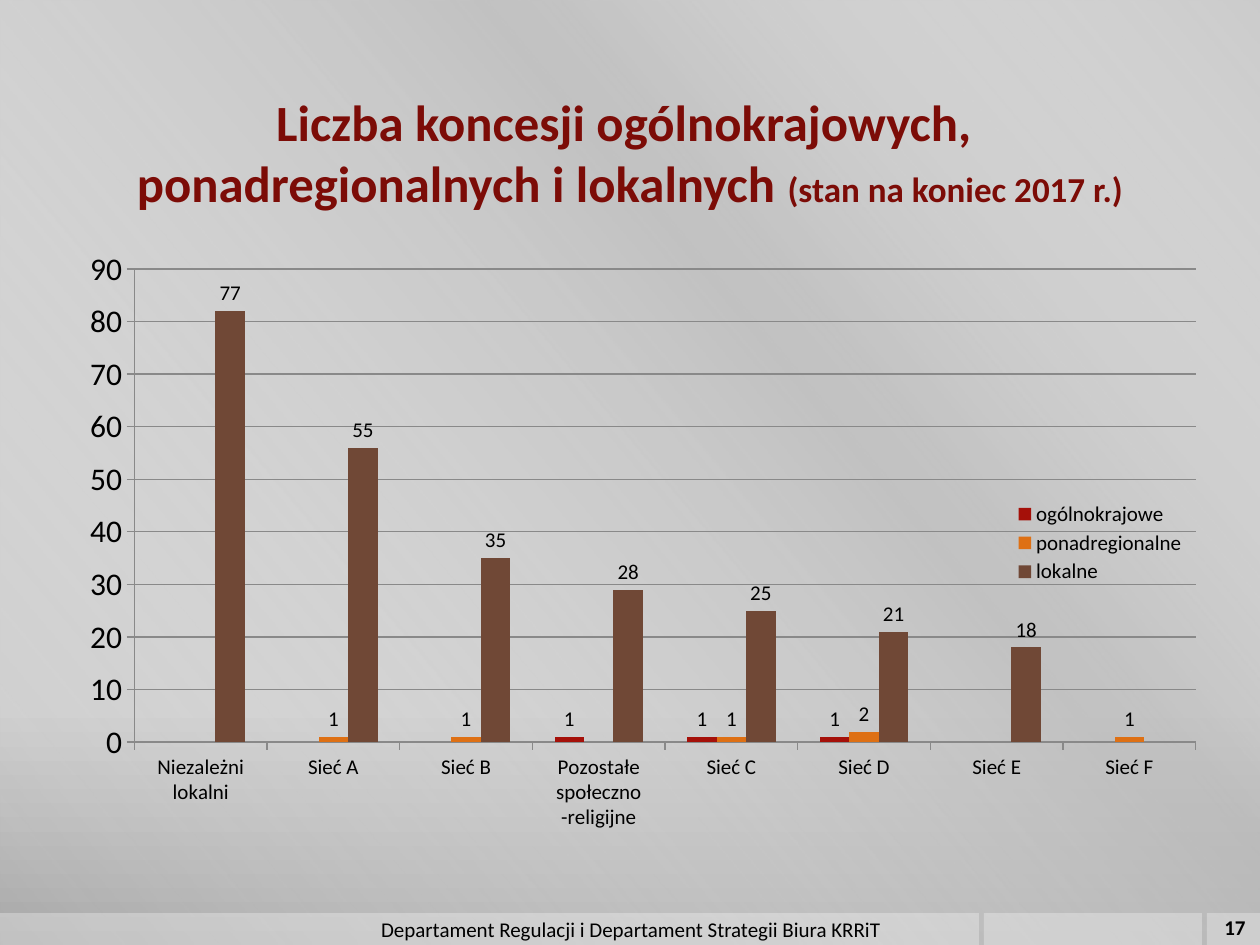
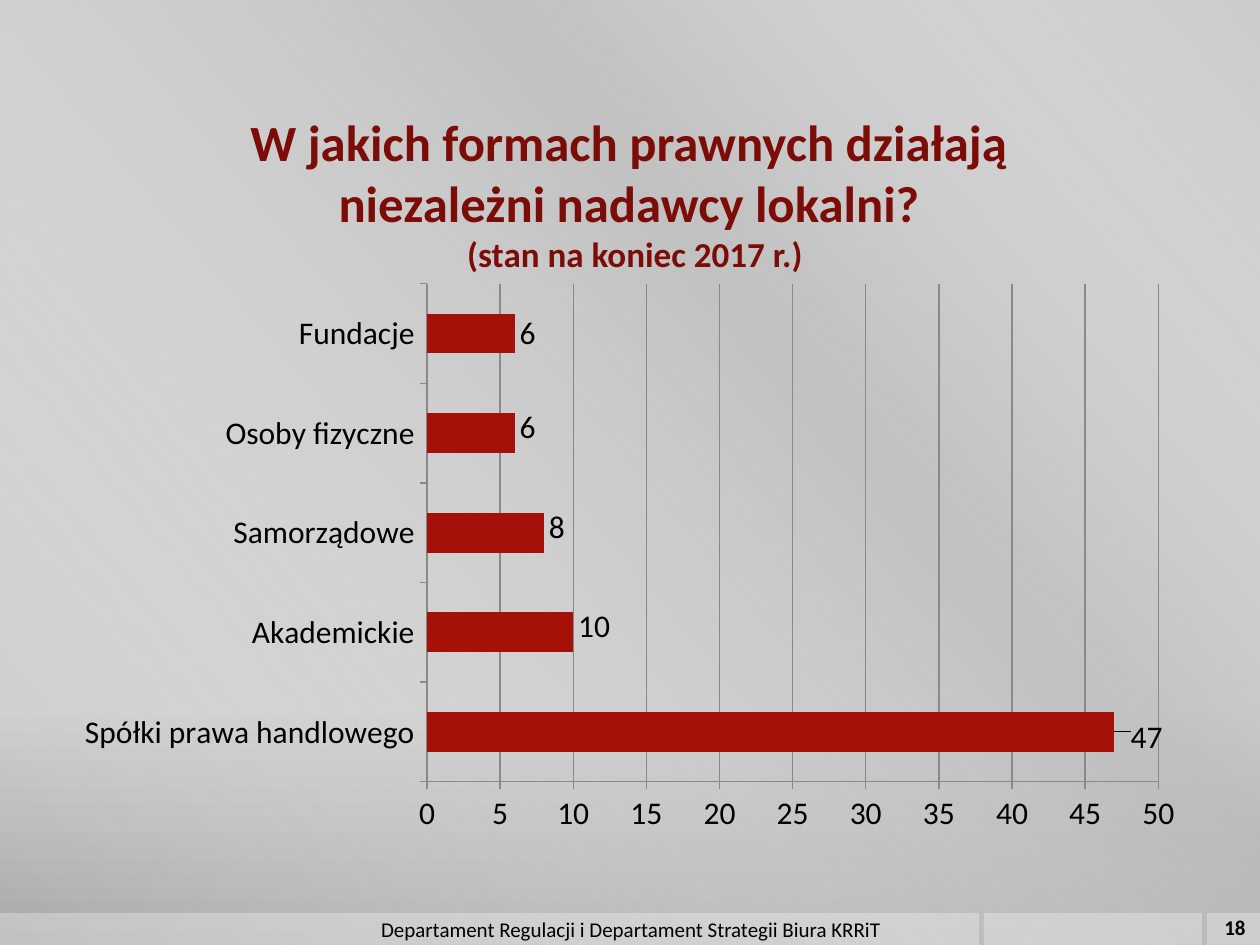
from lxml import etree
from pptx import Presentation
from pptx import util as u
from pptx.chart.data import CategoryChartData
from pptx.dml.color import RGBColor
from pptx.enum import chart as ch
from pptx.enum import shapes, text
from pptx.oxml import parse_xml
from pptx.oxml.ns import qn

SCALE = 914400 / 126
FONT = "Calibri"
TITLE_RED = "7C0C07"
RED, ORANGE, BROWN = "A51009", "DE7014", "704836"
BLACK, WHITE, GREY, GRID = "000000", "FFFFFF", "BFBFBF", "898989"
DRAWING = "http://schemas.openxmlformats.org/drawingml/2006/main"
FOOTER = "Departament Regulacji i Departament Strategii Biura KRRiT"
DATE_NOTE = "(stan na koniec 2017 r.)"


def emu(*lengths):
    return [u.Emu(round(length * SCALE)) for length in lengths]


def colour(value):
    return RGBColor.from_string(value)


def colour_xml(value, alpha):
    return f'<a:srgbClr val="{value}"><a:alpha val="{alpha * 1000}"/></a:srgbClr>'


def solid(value, alpha):
    return f'<a:solidFill xmlns:a="{DRAWING}">{colour_xml(value, alpha)}</a:solidFill>'


def gradient(angle, stops):
    listed = "".join(
        f'<a:gs pos="{place * 1000}">{colour_xml(value, alpha)}</a:gs>'
        for place, value, alpha in stops
    )
    return (
        f'<a:gradFill xmlns:a="{DRAWING}" rotWithShape="1"><a:gsLst>{listed}</a:gsLst>'
        f'<a:lin ang="{angle * 60000}" scaled="0"/></a:gradFill>'
    )


def paint(owner, fill, xml):
    fill.background()
    empty = owner.xpath(".//a:noFill")[0]
    empty.getparent().replace(empty, parse_xml(xml))


def style(font, size, value=BLACK, bold=False):
    font.name = FONT
    font.size = u.Pt(size)
    font.bold = bold
    font.color.rgb = colour(value)


def add_span(para, words, size, value=BLACK, bold=False):
    span = para.add_run()
    span.text = words
    style(span.font, size, value, bold)


def dress_master(master, page):
    paint(
        master.element,
        master.background.fill,
        gradient(90, [(0, "CBCBCB", 100), (76, "C8C8C8", 100), (100, "A7A7A7", 100)]),
    )
    sheen = gradient(140, [(0, WHITE, 0), (34, GREY, 61), (38, GREY, 76), (100, WHITE, 0)])
    band = solid(WHITE, 30)
    panels = [
        ((0, 0, 1260, 945), sheen),
        ((0, 913, 979, 32), band),
        ((984, 913, 218, 32), band),
        ((1207, 913, 53, 32), band),
    ]
    for place, (box, fill) in enumerate(panels, start=2):
        panel = page.shapes.add_shape(shapes.MSO_SHAPE.RECTANGLE, *emu(*box))
        panel.shadow.inherit = False
        paint(panel.element, panel.fill, fill)
        panel.line.fill.background()
        master.shapes.element.insert(place, panel.element)


def add_title(page, box, lines, note):
    title = page.shapes.title
    title.left, title.top, title.width, title.height = emu(*box)
    frame = title.text_frame
    frame.auto_size = text.MSO_AUTO_SIZE.NONE
    frame.word_wrap = True
    frame.vertical_anchor = text.MSO_ANCHOR.MIDDLE
    frame.margin_left = frame.margin_right = 0
    frame.margin_top = frame.margin_bottom = u.Inches(0.05)
    para = frame.paragraphs[0]
    para.alignment = text.PP_ALIGN.CENTER
    for index, line in enumerate(lines):
        if index:
            para.add_line_break()
        if line:
            add_span(para, line, 29, TITLE_RED, True)
    add_span(para, note, 20, TITLE_RED, True)


def add_label(page, box, words, alignment, bold=False):
    frame = page.shapes.add_textbox(*emu(*box)).text_frame
    frame.word_wrap = True
    frame.vertical_anchor = text.MSO_ANCHOR.MIDDLE
    para = frame.paragraphs[0]
    para.alignment = alignment
    add_span(para, words, 12, BLACK, bold)


def add_footer(page, number):
    add_label(page, (1205, 911, 53, 32), str(number), text.PP_ALIGN.RIGHT, True)
    add_label(page, (174, 913, 914, 32), FOOTER, text.PP_ALIGN.CENTER)


def set_layout(parent, place, **values):
    for old in parent.findall(qn("c:layout")):
        parent.remove(old)
    layout = etree.Element(qn("c:layout"))
    manual = etree.SubElement(layout, qn("c:manualLayout"))
    for name, value in values.items():
        etree.SubElement(manual, qn(f"c:{name}")).set("val", str(value))
    parent.insert(place, layout)


def fractions(outer, inner):
    left, top, width, height = outer
    return dict(
        x=round((inner[0] - left) / width, 3),
        y=round((inner[1] - top) / height, 3),
        w=round(inner[2] / width, 3),
        h=round(inner[3] / height, 3),
    )


def style_axis(axis, size):
    axis.major_tick_mark = ch.XL_TICK_MARK.OUTSIDE
    axis.minor_tick_mark = ch.XL_TICK_MARK.NONE
    axis.format.line.color.rgb = colour(GRID)
    axis.format.line.width = u.Pt(0.75)
    style(axis.tick_labels.font, size)


def add_bar_chart(page, kind, box, plot_box, categories, rows, top, step, sizes):
    category_size, label_size = sizes
    data = CategoryChartData(number_format="General")
    data.categories = categories
    for name, values, _ in rows:
        data.add_series(name, values)
    chart = page.shapes.add_chart(kind, *emu(*box), data).chart
    chart.has_title = False
    chart.has_legend = False
    style(chart.font, 18)
    backdrop = parse_xml(
        '<c:spPr xmlns:c="http://schemas.openxmlformats.org/drawingml/2006/chart" '
        f'xmlns:a="{DRAWING}"><a:noFill/><a:ln><a:noFill/></a:ln></c:spPr>'
    )
    chart.element.find(qn("c:txPr")).addprevious(backdrop)
    set_layout(
        chart.element.xpath("c:chart/c:plotArea")[0], 0,
        layoutTarget="inner", xMode="edge", yMode="edge", **fractions(box, plot_box),
    )
    style_axis(chart.category_axis, category_size)
    scale = chart.value_axis
    style_axis(scale, 18)
    scale.minimum_scale, scale.maximum_scale, scale.major_unit = 0, top, step
    scale.has_major_gridlines = True
    scale.major_gridlines.format.line.color.rgb = colour(GRID)
    scale.major_gridlines.format.line.width = u.Pt(0.75)
    plot = chart.plots[0]
    plot.gap_width, plot.overlap, plot.vary_by_categories = 150, 0, False
    for series, (_, _, value) in zip(plot.series, rows):
        series.format.fill.solid()
        series.format.fill.fore_color.rgb = colour(value)
        series.invert_if_negative = False
        labels = series.data_labels
        labels.show_value = True
        labels.position = ch.XL_LABEL_POSITION.OUTSIDE_END
        style(labels.font, label_size)
    return chart


def add_legend(chart, box, legend_box):
    chart.has_legend = True
    chart.legend.position = ch.XL_LEGEND_POSITION.RIGHT
    chart.legend.include_in_layout = False
    style(chart.legend.font, 12)
    set_layout(
        chart.element.xpath("c:chart/c:legend")[0], 1,
        xMode="edge", yMode="edge", **fractions(box, legend_box),
    )


def licence_page(page):
    add_title(
        page, (63, 84, 1134, 136),
        ["Liczba koncesji ogólnokrajowych, ", "ponadregionalnych i lokalnych "], DATE_NOTE,
    )
    box = (63, 242, 1134, 602)
    categories = [
        "Niezależni lokalni", "Sieć A", "Sieć B", "Pozostałe społeczno -religijne",
        "Sieć C", "Sieć D", "Sieć E", "Sieć F",
    ]
    rows = [
        ("ogólnokrajowe", [None, None, None, 1, 1, 1, None, None], RED),
        ("ponadregionalne", [None, 1, 1, None, 1, 2, None, 1], ORANGE),
        ("lokalne", [82, 56, 35, 29, 25, 21, 18, None], BROWN),
    ]
    chart = add_bar_chart(
        page, ch.XL_CHART_TYPE.COLUMN_CLUSTERED, box, (135, 269, 1061, 473),
        categories, rows, 90, 10, (12, 12),
    )
    add_legend(chart, box, (1010, 498, 180, 90))
    local = chart.plots[0].series[2]
    for index, words in {0: "77", 1: "55", 3: "28"}.items():
        label = local.points[index].data_label
        add_span(label.text_frame.paragraphs[0], words, 12)
        label.position = ch.XL_LABEL_POSITION.OUTSIDE_END
    add_footer(page, 17)


def legal_form_page(page):
    add_title(
        page, (68, 113, 1134, 159),
        ["W jakich formach prawnych działają ", "niezależni nadawcy lokalni? ", ""], DATE_NOTE,
    )
    categories = [
        "Spółki prawa handlowego", "Akademickie", "Samorządowe", "Osoby fizyczne", "Fundacje",
    ]
    chart = add_bar_chart(
        page, ch.XL_CHART_TYPE.BAR_CLUSTERED, (63, 273, 1134, 571), (427, 284, 731, 498),
        categories, [("Series 1", [47, 10, 8, 6, 6], RED)], 50, 5, (18, 18),
    )
    series = chart.plots[0].series[0]
    shifts = [(0.01, 0.01), (0, -0.01), (0, -0.01), (0, -0.01)]
    for index, (across, down) in enumerate(shifts):
        label = series.points[index].data_label
        style(label.font, 18)
        label.position = ch.XL_LABEL_POSITION.OUTSIDE_END
        holder = chart.element.xpath(f".//c:dLbl[c:idx/@val='{index}']")[0]
        set_layout(holder, 1, x=across, y=down)
    add_footer(page, 18)


def main():
    deck = Presentation()
    deck.slide_width, deck.slide_height = emu(1260, 945)
    layout = deck.slide_layouts[5]
    pages = [deck.slides.add_slide(layout) for _ in range(2)]
    dress_master(deck.slide_master, pages[0])
    for page, build in zip(pages, (licence_page, legal_form_page)):
        build(page)
    deck.save("out.pptx")


if __name__ == "__main__":
    main()
